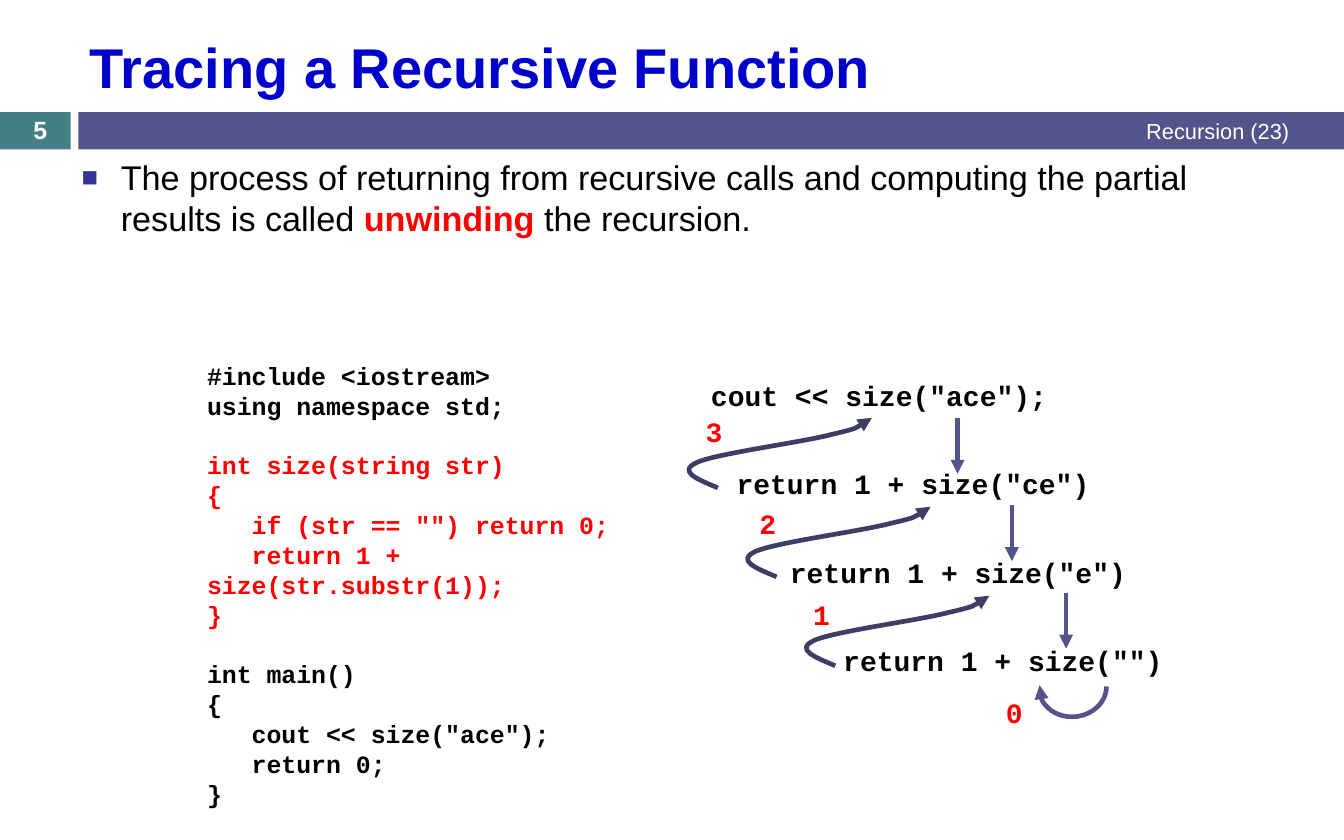
from lxml.etree import SubElement
from pptx import Presentation
from pptx.dml.color import RGBColor
from pptx.enum.shapes import MSO_CONNECTOR as Connector, MSO_SHAPE as Shape
from pptx.enum.text import MSO_ANCHOR as Anchor, PP_ALIGN as Align
from pptx.oxml.ns import qn
from pptx.util import Pt

THEME = {
    "bar": "53548A", "badge": "438086", "curve": "3D3E66", "title": "0000CC",
    "bullet": "333399", "red": "FF0000", "black": "000000", "white": "FFFFFF",
    "sans": "Arial", "mono": "Courier New",
    "title_size": 36, "body_size": 22, "trace_size": 18,
    "code_size": 16, "badge_size": 16, "footer_size": 14,
}


def write(shape, paragraphs, size, font="sans", align=Align.LEFT, anchor=Anchor.TOP):
    tf = shape.text_frame
    frame = {"word_wrap": True, "vertical_anchor": anchor,
             "margin_left": Pt(7.2), "margin_right": Pt(7.2),
             "margin_top": Pt(3.6), "margin_bottom": Pt(3.6)}
    for name, value in frame.items():
        setattr(tf, name, value)
    for i, runs in enumerate(paragraphs):
        p = tf.paragraphs[0] if i == 0 else tf.add_paragraph()
        p.alignment = align
        for text, color, bold in runs:
            r = p.add_run()
            r.text = text
            r.font.color.rgb = RGBColor.from_string(THEME[color])
            style = {"name": THEME[font], "size": Pt(THEME[size]), "bold": bold}
            for name, value in style.items():
                setattr(r.font, name, value)
    return tf


def arrow_line(shape, color):
    shape.line.color.rgb = RGBColor.from_string(THEME[color])
    shape.line.width = Pt(3)
    SubElement(shape.line._get_or_add_ln(), qn("a:tailEnd"), type="triangle")
    if shape._element.spPr.find(qn("a:effectLst")) is None:
        SubElement(shape._element.spPr, qn("a:effectLst"))


prs = Presentation()
prs.slide_width, prs.slide_height = Pt(864), Pt(540)
s = prs.slides.add_slide(prs.slide_layouts[5])

for left, width, color in [(0, 45.4, "badge"), (50.4, 813.6, "bar")]:
    bar = s.shapes.add_shape(Shape.RECTANGLE, Pt(left), Pt(72), Pt(width), Pt(24))
    bar.fill.solid()
    bar.fill.fore_color.rgb = RGBColor.from_string(THEME[color])
    bar.line.fill.background()
    bar.shadow.inherit = False

title = s.shapes.title
place = {"left": Pt(50.4), "top": Pt(13.7), "width": Pt(785.5), "height": Pt(57.6)}
for name, value in place.items():
    setattr(title, name, value)
write(title, [[("Tracing a Recursive Function", "title", True)]], "title_size", anchor=Anchor.MIDDLE)

body = s.shapes.add_textbox(Pt(45.4), Pt(97.2), Pt(791.3), Pt(422))
tf = write(body, [[
    ("The process of returning from recursive calls and computing the partial results is called ", "black", False),
    ("unwinding", "red", True),
    (" the recursion.", "black", False),
]], "body_size")
p = tf.paragraphs[0]
p.space_before = Pt(7)
p.line_spacing = Pt(26.4)
pPr = p._p.get_or_add_pPr()
pPr.set("marL", str(Pt(25.2)))
pPr.set("indent", str(-Pt(25.2)))
SubElement(SubElement(pPr, qn("a:buClr")), qn("a:srgbClr"), val=THEME["bullet"])
SubElement(pPr, qn("a:buSzPct"), val="80000")
SubElement(pPr, qn("a:buFont"), typeface=THEME["sans"])
SubElement(pPr, qn("a:buChar"), char="■")

footer = s.shapes.add_textbox(Pt(324), Pt(71.3), Pt(512), Pt(25.2))
write(footer, [[("Recursion (23)", "white", False)]], "footer_size", align=Align.RIGHT, anchor=Anchor.MIDDLE)
number = s.shapes.add_textbox(0, Pt(72.7), Pt(51.8), Pt(21.6))
write(number, [[("5", "white", True)]], "badge_size", align=Align.CENTER, anchor=Anchor.MIDDLE)

CURVE = [
    [(5, 39.6), (-8, 34.6), (4.3, 28.8)],
    [(16.6, 23), (72, 15.8), (90.7, 10.8)],
    [(109.4, 6.5), (113, 3), (117, 0)],
]
trace = [("3", 'return 1 + size("ce")'), ("2", 'return 1 + size("e")'), ("1", 'return 1 + size("")')]
labels = [('cout << size("ace");', "black", 450, 239.8, 235.4, Align.LEFT),
          ("0", "red", 630, 443.5, 43.9, Align.CENTER)]

for i, (result, call) in enumerate(trace):
    x, y = 443.5 + 37.75 * i, 268.6 + 57.2 * i
    builder = s.shapes.build_freeform(Pt(x + 18), Pt(y + 45))
    builder.add_line_segments([(Pt(x), Pt(y + 32)), (Pt(x + 117), Pt(y))], close=False)
    curve = builder.convert_to_shape()
    curve.fill.background()
    curve.shadow.inherit = False
    outline = curve._element.spPr.find(".//" + qn("a:path"))
    for segment in outline.findall(qn("a:lnTo")):
        outline.remove(segment)
    for points in CURVE:
        bezier = SubElement(outline, qn("a:cubicBezTo"))
        for px, py in points:
            SubElement(bezier, qn("a:pt"), x=str(Pt(px)), y=str(Pt(py)))
    arrow_line(curve, "curve")

    x, y = 615.6 + 34.9 * i, 268.6 + 56.2 * i
    down = s.shapes.add_connector(Connector.STRAIGHT, Pt(x), Pt(y), Pt(x), Pt(y + 36))
    arrow_line(down, "bar")
    labels.append((result, "red", 437 + 34.6 * i, 262.8 + 59 * i, 43.9, Align.CENTER))
    labels.append((call, "black", 466.4 + 34.3 * i, 296.6 + 56.9 * i, 260 if i == 0 else 244, Align.LEFT))

for text, color, left, top, width, align in labels:
    box = s.shapes.add_textbox(Pt(left), Pt(top), Pt(width), Pt(28.8))
    write(box, [[(text, color, True)]], "trace_size", "mono", align)

arc = s.shapes.add_shape(Shape.ARC, Pt(671), Pt(420.5), Pt(37.4), Pt(43.2))
arc.adjustments[0], arc.adjustments[1] = 164.56, 60.35
arc.rotation = 83.7
arc.fill.background()
arc.shadow.inherit = False
arrow_line(arc, "bar")

blocks = [
    ("black", ["#include <iostream>", "using namespace std;"]),
    ("red", ["int size(string str)", "{", '   if (str == "") return 0;',
             "   return 1 + size(str.substr(1));", "}"]),
    ("black", ["int main()", "{", '   cout << size("ace");', "   return 0;", "}"]),
]
code = s.shapes.add_textbox(Pt(126), Pt(228.2), Pt(337.7), Pt(278.6))
lines = [[(line, color, True)] for color, block in blocks for line in block]
tf = write(code, lines, "code_size", "mono")
for p in tf.paragraphs:
    p.line_spacing = Pt(19.2)
    if p.text.startswith("int "):
        p.space_before = Pt(19.2)

prs.save("out.pptx")
